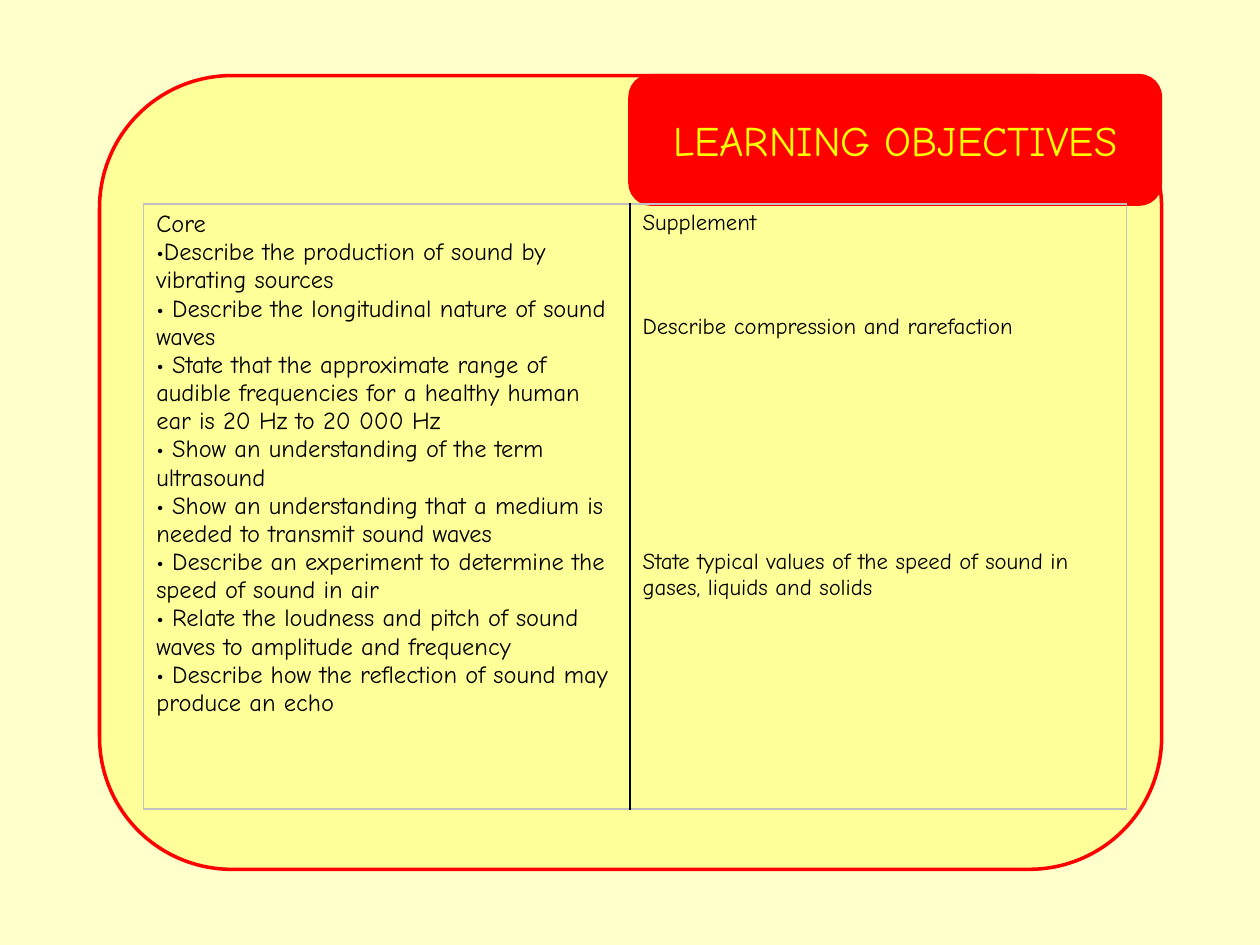
from dataclasses import dataclass

from lxml import etree
from pptx import Presentation
from pptx.dml.color import RGBColor
from pptx.enum import shapes, text
from pptx.oxml import ns
from pptx.util import Inches, Pt


@dataclass(frozen=True)
class Theme:
    font: str = "Comic Neue"
    page: str = "FFFFCC"
    panel: str = "FFFF99"
    accent: str = "FF0000"
    title: str = "FFFF00"
    ink: str = "000000"
    grid: str = "C0C0C0"
    title_size: int = 24
    core_size: int = 14
    supplement_size: int = 13


THEME = Theme()

CORE = [
    "Core",
    "•Describe the production of sound by vibrating sources",
    "• Describe the longitudinal nature of sound waves",
    "• State that the approximate range of audible frequencies for a healthy "
    "human ear is 20 Hz to 20 000 Hz",
    "• Show an understanding of the term ultrasound",
    "• Show an understanding that a medium is needed to transmit sound waves",
    "• Describe an experiment to determine the speed of sound in air",
    "• Relate the loudness and pitch of sound waves to amplitude and frequency",
    "• Describe how the reflection of sound may produce an echo",
]
SUPPLEMENT = [
    "Supplement",
    "Describe compression and rarefaction",
    "State typical values of the speed of sound in gases, liquids and solids",
]
SUPPLEMENT_GAPS = [0, 44.6, 118.9]  # points before each paragraph


def rgb(color):
    return RGBColor.from_string(color)


def style_paragraph(p, size, color):
    p.font.name = THEME.font
    p.font.size = Pt(size)
    p.font.color.rgb = rgb(color)


def add_block(s, kind, box, fill, line=None):
    sp = s.shapes.add_shape(kind, *map(Inches, box))
    sp.shadow.inherit = False
    sp.fill.solid()
    sp.fill.fore_color.rgb = rgb(fill)
    if line:
        sp.line.color.rgb = rgb(line)
        sp.line.width = Pt(2)
    else:
        sp.line.fill.background()
    return sp


def add_backdrop(s, box):
    """Page colour with the rounded panel inset in it."""
    left, top, width, height = box
    add_block(s, shapes.MSO_SHAPE.RECTANGLE, box, THEME.page)
    panel = (left + 0.79, top + 0.6, width - 1.57, height - 1.2)
    add_block(s, shapes.MSO_SHAPE.ROUNDED_RECTANGLE, panel, THEME.panel, THEME.accent)


def add_title(s, box, title):
    sp = add_block(s, shapes.MSO_SHAPE.ROUNDED_RECTANGLE, box, THEME.accent, THEME.accent)
    tf = sp.text_frame
    tf.vertical_anchor = text.MSO_ANCHOR.MIDDLE
    p = tf.paragraphs[0]
    p.text = title
    p.alignment = text.PP_ALIGN.CENTER
    style_paragraph(p, THEME.title_size, THEME.title)


def set_borders(cell, **colors):
    """Draw 1 pt borders; keys are L, R, T and B in that order."""
    tc_pr = cell._tc.get_or_add_tcPr()
    for side, color in colors.items():
        ln = etree.SubElement(tc_pr, ns.qn(f"a:ln{side}"), w=str(Pt(1)))
        fill = etree.SubElement(ln, ns.qn("a:solidFill"))
        etree.SubElement(fill, ns.qn("a:srgbClr"), val=color)


def fill_cell(cell, lines, size, gaps):
    cell.fill.background()
    tf = cell.text_frame
    for i, (line, gap) in enumerate(zip(lines, gaps)):
        p = tf.add_paragraph() if i else tf.paragraphs[0]
        p.text = line
        p.space_before = Pt(gap)
        style_paragraph(p, size, THEME.ink)


def add_objectives(s, box):
    left, top, width, height = map(Inches, box)
    table = s.shapes.add_table(1, 2, left, top, width, height).table
    table.first_row = table.horz_banding = False
    table.columns[0].width = Inches(3.86)
    table.columns[1].width = width - Inches(3.86)
    core, supplement = table.cell(0, 0), table.cell(0, 1)
    grid, ink = THEME.grid, THEME.ink
    set_borders(core, L=grid, R=ink, T=grid, B=grid)
    set_borders(supplement, L=ink, R=grid, T=grid, B=grid)
    fill_cell(core, CORE, THEME.core_size, [0] * len(CORE))
    fill_cell(supplement, SUPPLEMENT, THEME.supplement_size, SUPPLEMENT_GAPS)


def main():
    prs = Presentation()
    prs.slide_width, prs.slide_height = Inches(10), Inches(7.5)
    s = prs.slides.add_slide(prs.slide_layouts[6])
    s.background.fill.solid()
    s.background.fill.fore_color.rgb = rgb(THEME.panel)
    add_backdrop(s, (0, 0, 10, 7.5))
    add_title(s, (5, 0.6, 4.21, 1.02), "LEARNING OBJECTIVES")
    add_objectives(s, (1.14, 1.62, 7.8, 4.8))
    prs.save("out.pptx")


if __name__ == "__main__":
    main()
